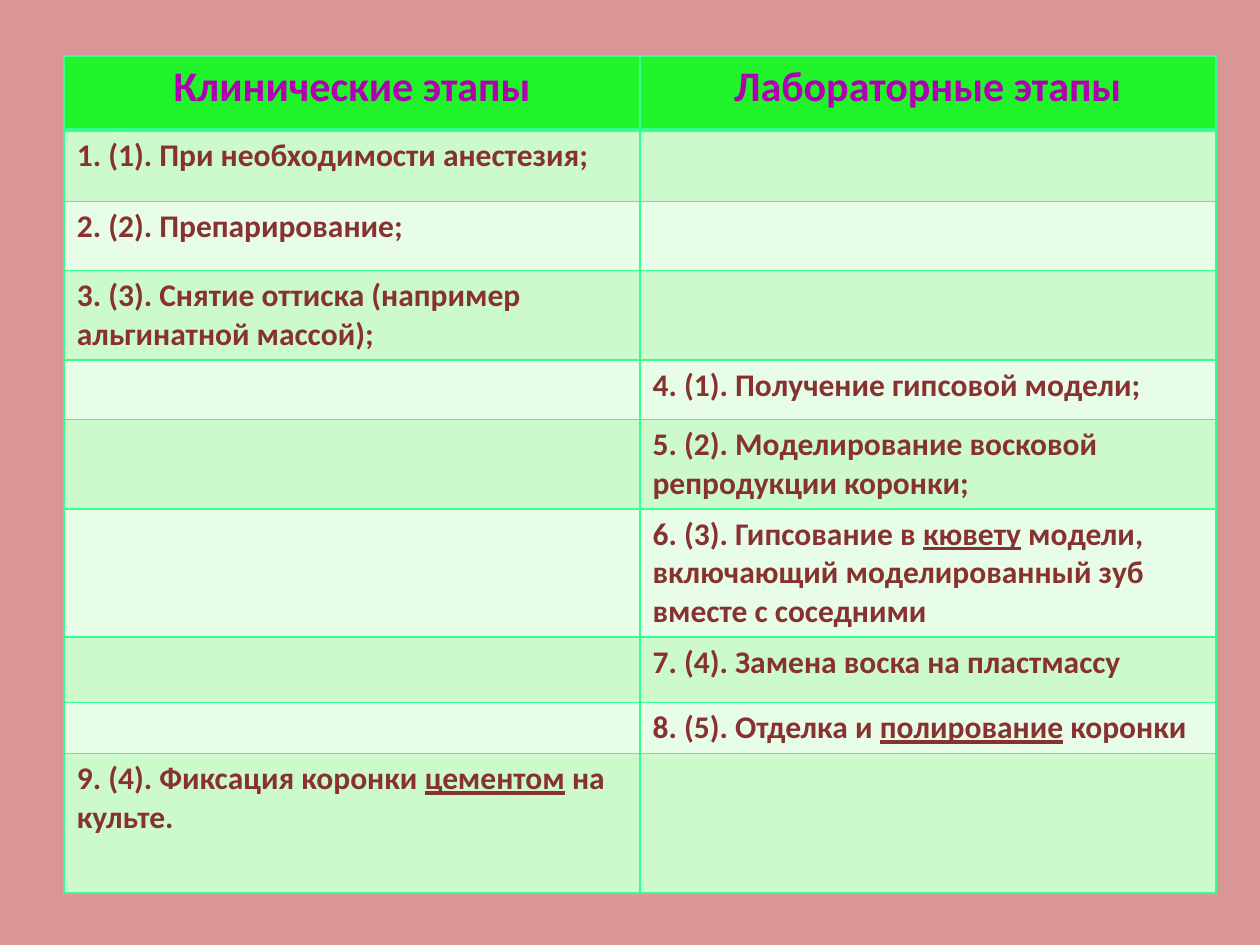
from dataclasses import dataclass

from lxml import etree
from pptx import Presentation, util as u
from pptx.dml.color import RGBColor
from pptx.enum import text
from pptx.oxml import ns


@dataclass(frozen=True)
class Theme:
    font: str = "Calibri"
    background: str = "D99694"
    header_fill: str = "21F32B"
    header_text: str = "B100B2"
    body_fills: tuple = ("CDFACD", "E8FDE8")
    body_text: str = "873230"
    border: str = "36FF91"
    header_size: int = 24
    body_size: int = 18
    thin: int = 1
    thick: int = 3


HEADERS = ("Клинические этапы", "Лабораторные этапы")
CLINICAL, LABORATORY = 0, 1

# Column, row weight and wording of each stage; underscores enclose underlined words.
STAGES = (
    (CLINICAL, 57, "1. (1). При необходимости анестезия;"),
    (CLINICAL, 55, "2. (2). Препарирование;"),
    (CLINICAL, 70, "3. (3). Снятие оттиска (например альгинатной массой);"),
    (LABORATORY, 47, "4. (1). Получение гипсовой модели;"),
    (LABORATORY, 70, "5. (2). Моделирование восковой репродукции коронки;"),
    (LABORATORY, 102, "6. (3). Гипсование в _кювету_ модели, включающий моделированный зуб вместе с соседними"),
    (LABORATORY, 52, "7. (4). Замена воска на пластмассу"),
    (LABORATORY, 40, "8. (5). Отделка и _полирование_ коронки"),
    (CLINICAL, 111, "9. (4). Фиксация коронки _цементом_ на культе."),
)
HEADER_WEIGHT = 59


def write_text(frame, wording, *, font, size, color, bold=True, align=None):
    """Write one paragraph, underlining the words enclosed in underscores."""
    paragraph = frame.paragraphs[0]
    paragraph.alignment = align
    for index, part in enumerate(wording.split("_")):
        run = paragraph.add_run()
        run.text = part
        run.font.name = font
        run.font.size = u.Pt(size)
        run.font.bold = bold
        run.font.color.rgb = RGBColor.from_string(color)
        if index % 2:
            run.font.underline = True


def set_borders(cell, color, left, right, top, bottom):
    """Set the line widths, in points, of the four sides of a cell without a fill."""
    properties = cell._tc.get_or_add_tcPr()
    for side, width in zip("LRTB", (left, right, top, bottom)):
        line = etree.SubElement(properties, ns.qn(f"a:ln{side}"), w=str(u.Pt(width)))
        fill = etree.SubElement(line, ns.qn("a:solidFill"))
        etree.SubElement(fill, ns.qn("a:srgbClr"), val=color)


class SlideBuilder:
    def __init__(self, presentation, theme):
        self.theme = theme
        self.width = presentation.slide_width
        self.height = presentation.slide_height
        self.slide = presentation.slides.add_slide(presentation.slide_layouts[6])
        background = self.slide.background.fill
        background.solid()
        background.fore_color.rgb = RGBColor.from_string(theme.background)

    def stage_table(self, left, top, width, height):
        """Add the table of stages; lengths are percentages of the slide's size."""
        x, w = (int(self.width * share / 100) for share in (left, width))
        y, h = (int(self.height * share / 100) for share in (top, height))
        weights = [HEADER_WEIGHT] + [weight for _, weight, _ in STAGES]
        table = self.slide.shapes.add_table(len(weights), len(HEADERS), x, y, w, h).table
        table.horz_banding = False
        for row, weight in zip(table.rows, weights):
            row.height = int(h * weight / sum(weights))

        for column, wording in enumerate(HEADERS):
            self.header_cell(table.cell(0, column), wording)
        for row, (stage_column, _, wording) in enumerate(STAGES, start=1):
            for column in range(len(HEADERS)):
                content = wording if column == stage_column else ""
                self.body_cell(table.cell(row, column), row, content)

    def header_cell(self, cell, wording):
        theme = self.theme
        self.frame_cell(cell, theme.header_fill, bottom=theme.thick)
        write_text(cell.text_frame, wording, font=theme.font, size=theme.header_size,
                   color=theme.header_text, align=text.PP_ALIGN.CENTER)

    def body_cell(self, cell, row, wording):
        theme = self.theme
        fill = theme.body_fills[(row - 1) % 2]
        self.frame_cell(cell, fill, top=theme.thick if row == 1 else theme.thin)
        if wording:
            write_text(cell.text_frame, wording, font=theme.font, size=theme.body_size,
                       color=theme.body_text)

    def frame_cell(self, cell, fill, top=Theme.thin, bottom=Theme.thin):
        thin = self.theme.thin
        set_borders(cell, self.theme.border, thin, thin, top, bottom)
        cell.fill.solid()
        cell.fill.fore_color.rgb = RGBColor.from_string(fill)


def main():
    presentation = Presentation()
    presentation.slide_width = u.Inches(10)
    presentation.slide_height = u.Inches(7.5)
    builder = SlideBuilder(presentation, Theme())
    builder.stage_table(left=5.1, top=5.9, width=91.4, height=88.2)
    presentation.save("out.pptx")


if __name__ == "__main__":
    main()
